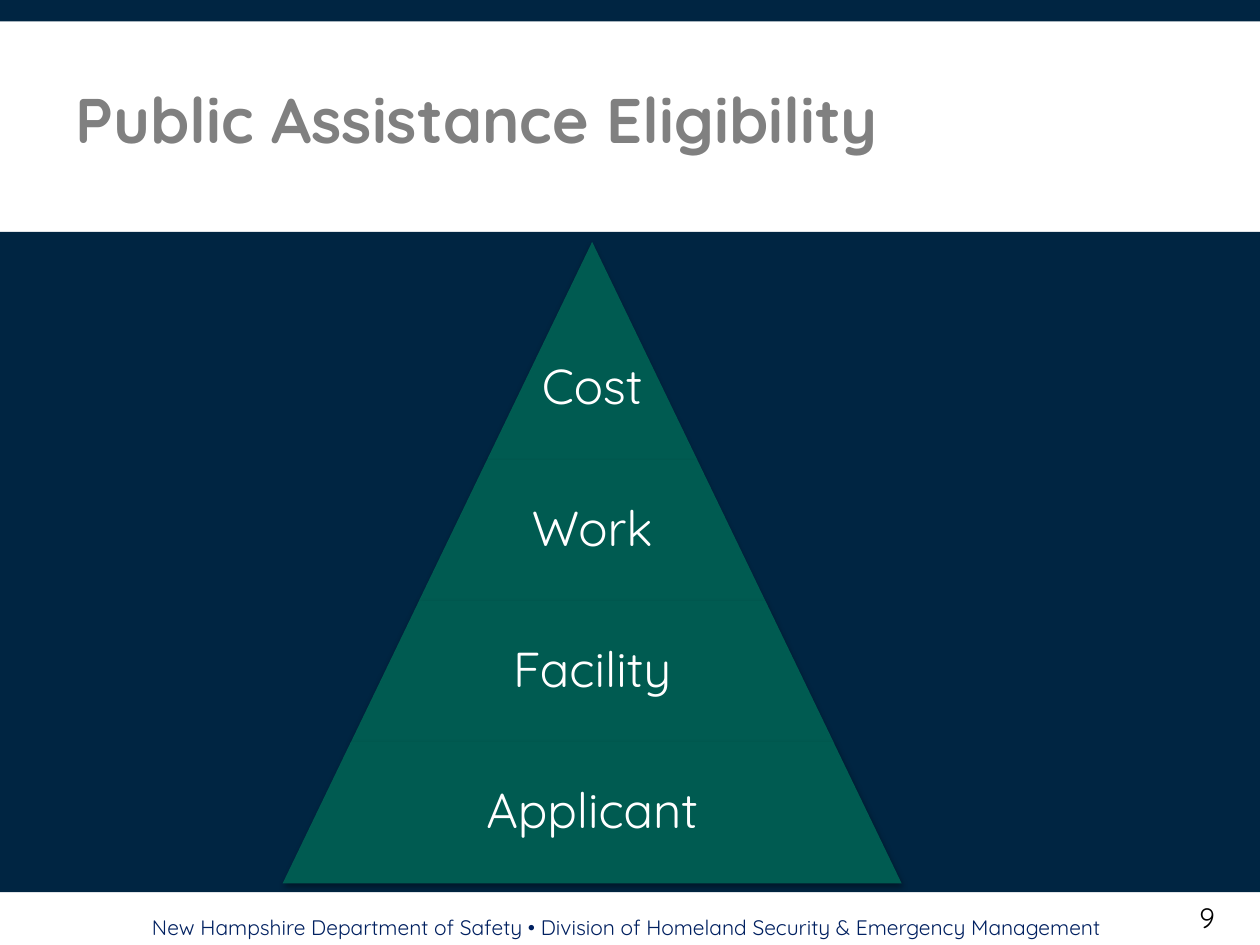
from dataclasses import dataclass

from lxml.etree import SubElement
from pptx import Presentation
from pptx.dml.color import RGBColor
from pptx.enum.shapes import MSO_SHAPE as Shape
from pptx.enum.text import MSO_ANCHOR as Anchor, PP_ALIGN as Align
from pptx.oxml.ns import qn
from pptx.util import Inches, Pt


@dataclass(frozen=True)
class Theme:
    font: str = "Quicksand"
    navy: str = "002542"
    green: str = "005B51"
    title: str = "808080"
    footer: str = "002060"
    white: str = "FFFFFF"
    black: str = "000000"
    title_size: int = 36
    tier_size: int = 28
    number_size: int = 16
    footer_size: int = 12


@dataclass(frozen=True)
class Box:
    left: float
    top: float
    width: float
    height: float

    def lengths(self) -> list:
        return [Inches(v) for v in (self.left, self.top, self.width, self.height)]


@dataclass(frozen=True)
class Tier:
    label: str
    height: float
    label_share: float = 0.65  # label width as a share of the tier's base
    label_drop: float = 0.0  # extra space above the label


THEME = Theme()
CENTER, APEX, SLOPE = 4.7, 1.92, 0.965  # slope: base width per inch of height
TIERS = [
    Tier("Cost", 1.73, label_share=1.0, label_drop=0.6),
    Tier("Work", 1.12),
    Tier("Facility", 1.12),
    Tier("Applicant", 1.12),
]


def add_block(slide, kind: Shape, box: Box, color: str):
    block = slide.shapes.add_shape(kind, *box.lengths())
    block.shadow.inherit = False
    block.fill.solid()
    block.fill.fore_color.rgb = RGBColor.from_string(color)
    block.line.fill.background()
    return block


def add_label(slide, box: Box, text: str, size: int, color: str, bold: bool = False,
              align: Align = Align.LEFT, anchor: Anchor = Anchor.TOP,
              margins: tuple = (0.1, 0.05, 0.1, 0.05), spacing: float = 1.0) -> None:
    frame = slide.shapes.add_textbox(*box.lengths()).text_frame
    frame.word_wrap = True
    frame.vertical_anchor = anchor
    (frame.margin_left, frame.margin_top,
     frame.margin_right, frame.margin_bottom) = [Inches(m) for m in margins]
    paragraph = frame.paragraphs[0]
    paragraph.alignment = align
    paragraph.line_spacing = spacing
    run = paragraph.add_run()
    run.text = text
    run.font.name = THEME.font
    run.font.size = Pt(size)
    run.font.bold = bold
    run.font.color.rgb = RGBColor.from_string(color)


def add_soft_shadow(block) -> None:
    effects = block.element.spPr.find(qn("a:effectLst"))
    shadow = SubElement(effects, qn("a:outerShdw"), blurRad="40000", dist="23000",
                        dir="5400000", rotWithShape="0")
    color = SubElement(shadow, qn("a:srgbClr"), val=THEME.black)
    SubElement(color, qn("a:alpha"), val="35000")


def add_tier(slide, tier: Tier, top: float) -> None:
    width = SLOPE * (top + tier.height - APEX)
    block = add_block(slide, Shape.TRAPEZOID,
                      Box(CENTER - width / 2, top, width, tier.height), THEME.green)
    side_inset = SLOPE * tier.height / 2
    block.adjustments[0] = side_inset / min(width, tier.height)
    add_soft_shadow(block)
    label_width = width * tier.label_share
    add_label(slide, Box(CENTER - label_width / 2, top, label_width, tier.height),
              tier.label, THEME.tier_size, THEME.white,
              align=Align.CENTER, anchor=Anchor.MIDDLE, spacing=0.9,
              margins=(0.04, 0.04 + tier.label_drop, 0.04, 0.04))


def main() -> None:
    deck = Presentation()
    deck.slide_width, deck.slide_height = Inches(10), Inches(7.5)
    slide = deck.slides.add_slide(deck.slide_layouts[6])

    # Navy bands
    for band in (Box(0, 0, 10, 0.17), Box(0, 1.84, 10, 5.24)):
        add_block(slide, Shape.RECTANGLE, band, THEME.navy)

    # Footer and page number
    add_label(slide, Box(0.11, 7.24, 9.73, 0.24),
              "New Hampshire Department of Safety • "
              "Division of Homeland Security & Emergency Management",
              THEME.footer_size, THEME.footer, align=Align.CENTER,
              margins=(0.05,) * 4, spacing=0.85)
    add_label(slide, Box(9.42, 7.1, 0.58, 0.37), "9", THEME.number_size, THEME.black)

    # Title
    add_label(slide, Box(0.5, 0.33, 6.87, 1.22), "Public Assistance Eligibility",
              THEME.title_size, THEME.title, bold=True, anchor=Anchor.MIDDLE)

    # Pyramid, from the apex down
    top = APEX
    for tier in TIERS:
        add_tier(slide, tier, top)
        top += tier.height

    deck.save("out.pptx")


if __name__ == "__main__":
    main()
